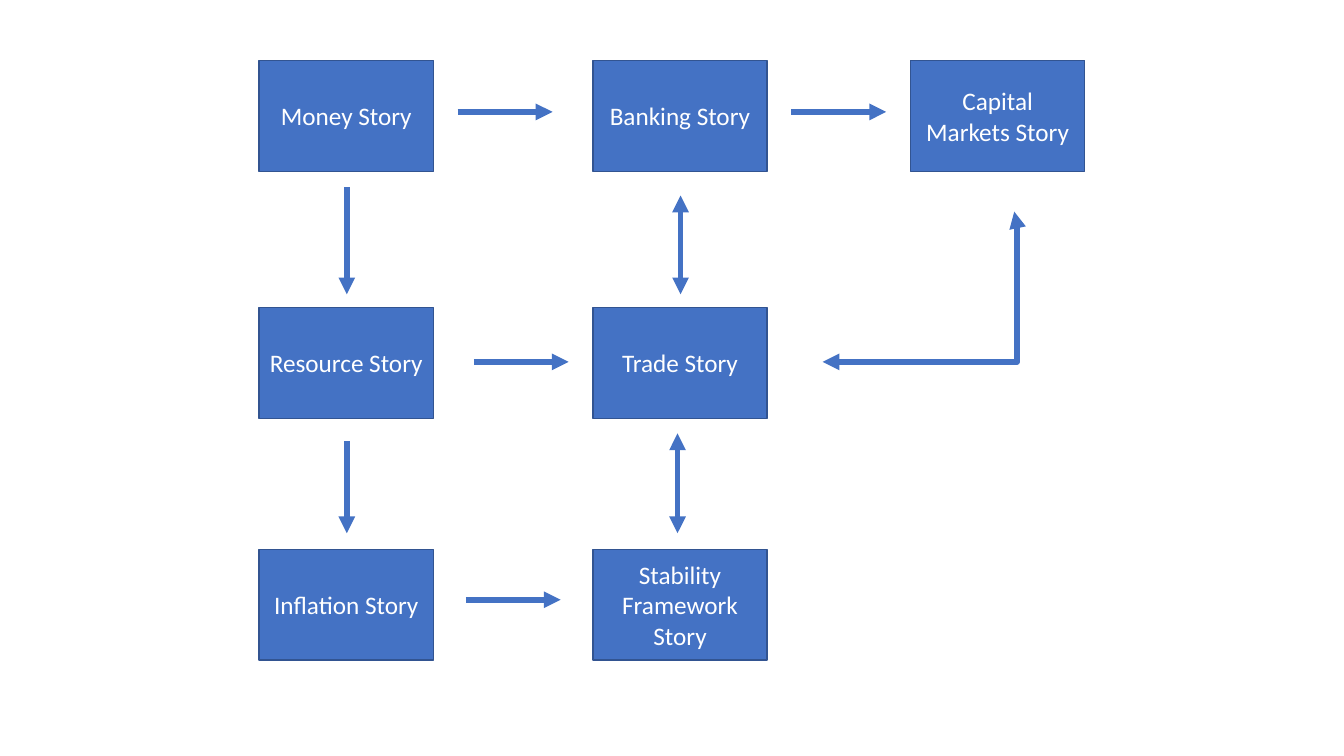
from dataclasses import dataclass

from lxml import etree
from pptx import Presentation
from pptx.dml.color import RGBColor
from pptx.enum.shapes import MSO_CONNECTOR, MSO_SHAPE
from pptx.enum.text import MSO_ANCHOR, PP_ALIGN
from pptx.oxml.ns import qn
from pptx.util import Inches, Pt

RECTANGLE = MSO_SHAPE.RECTANGLE
STRAIGHT, ELBOW = MSO_CONNECTOR.STRAIGHT, MSO_CONNECTOR.ELBOW
CENTER, MIDDLE = PP_ALIGN.CENTER, MSO_ANCHOR.MIDDLE
BLANK_LAYOUT = 6


@dataclass(frozen=True)
class Theme:
    """Hold the colours, font and sizes of the slide."""

    blue: RGBColor = RGBColor(0x44, 0x72, 0xC4)
    border: RGBColor = RGBColor(0x32, 0x54, 0x91)
    white: RGBColor = RGBColor(0xFF, 0xFF, 0xFF)
    font: str = "Calibri"
    text_size: Pt = Pt(18)
    border_width: Pt = Pt(1)
    arrow_width: Pt = Pt(4)


THEME = Theme()
DIAGRAM_LEFT, DIAGRAM_TOP = 2.57, 0.6
STORY_WIDTH, STORY_HEIGHT = 1.73, 1.1
COLUMNS = (0, 3.31, 6.46)
ROWS = (0, 2.45, 4.85)
STORIES = (
    ("Money Story", "Banking Story", "Capital Markets Story"),
    ("Resource Story", "Trade Story"),
    ("Inflation Story", "Stability Framework Story"),
)
RIGHT_ARROWS = ((1.97, 0.51), (5.28, 0.51), (2.13, 2.99), (2.05, 5.35))
RIGHT_LENGTH = 0.94
DOWN_ARROWS = (
    (0.87, 1.26, 2.32, False),
    (0.87, 3.78, 4.69, False),
    (4.18, 1.34, 2.32, True),
    (4.15, 3.7, 4.69, True),
)
TRADE_TO_CAPITAL = (5.59, 2.99, 7.49, 1.5)
ELBOW_BEND = 101500


def add_story(page, left, top, name):
    """Draw one story rectangle with its centred name."""
    box = page.shapes.add_shape(
        RECTANGLE, Inches(left), Inches(top), Inches(STORY_WIDTH), Inches(STORY_HEIGHT)
    )
    box.shadow.inherit = False
    box.fill.solid()
    box.fill.fore_color.rgb = THEME.blue
    box.line.color.rgb = THEME.border
    box.line.width = THEME.border_width
    frame = box.text_frame
    frame.word_wrap = True
    frame.vertical_anchor = MIDDLE
    frame.text = name
    para = frame.paragraphs[0]
    para.alignment = CENTER
    font = para.runs[0].font
    font.name, font.size = THEME.font, THEME.text_size
    font.color.rgb = THEME.white


def add_arrow(page, left, top, ends, both_ways=False, kind=STRAIGHT):
    """Draw an arrow whose ends are relative to the given corner."""
    x1, y1, x2, y2 = ends
    arrow = page.shapes.add_connector(
        kind, Inches(left + x1), Inches(top + y1), Inches(left + x2), Inches(top + y2)
    )
    arrow.line.color.rgb = THEME.blue
    arrow.line.width = THEME.arrow_width
    properties = arrow._element.spPr
    outline = properties.find(qn("a:ln"))
    for tag in ("a:headEnd", "a:tailEnd") if both_ways else ("a:tailEnd",):
        etree.SubElement(outline, qn(tag), type="triangle")
    etree.SubElement(properties, qn("a:effectLst"))
    return arrow


def bend_elbow(arrow, amount):
    """Move the bend of an elbow arrow along its width."""
    geometry = arrow._element.spPr.find(qn("a:prstGeom"))
    values = geometry.find(qn("a:avLst"))
    if values is None:
        values = etree.SubElement(geometry, qn("a:avLst"))
    etree.SubElement(values, qn("a:gd"), name="adj1", fmla=f"val {amount}")


def add_stories(page, left, top):
    """Place the story rectangles on their grid."""
    for row, names in zip(ROWS, STORIES):
        for column, name in zip(COLUMNS, names):
            add_story(page, left + column, top + row, name)


def add_arrows(page, left, top):
    """Place the arrows between the stories."""
    for x, y in RIGHT_ARROWS:
        add_arrow(page, left, top, (x, y, x + RIGHT_LENGTH, y))
    for x, start, end, both_ways in DOWN_ARROWS:
        add_arrow(page, left, top, (x, start, x, end), both_ways)
    elbow = add_arrow(page, left, top, TRADE_TO_CAPITAL, True, ELBOW)
    bend_elbow(elbow, ELBOW_BEND)


def main():
    """Build the slide and save the deck."""
    deck = Presentation()
    deck.slide_width, deck.slide_height = Inches(13.33), Inches(7.5)
    page = deck.slides.add_slide(deck.slide_layouts[BLANK_LAYOUT])
    add_stories(page, DIAGRAM_LEFT, DIAGRAM_TOP)
    add_arrows(page, DIAGRAM_LEFT, DIAGRAM_TOP)
    deck.save("out.pptx")


if __name__ == "__main__":
    main()
